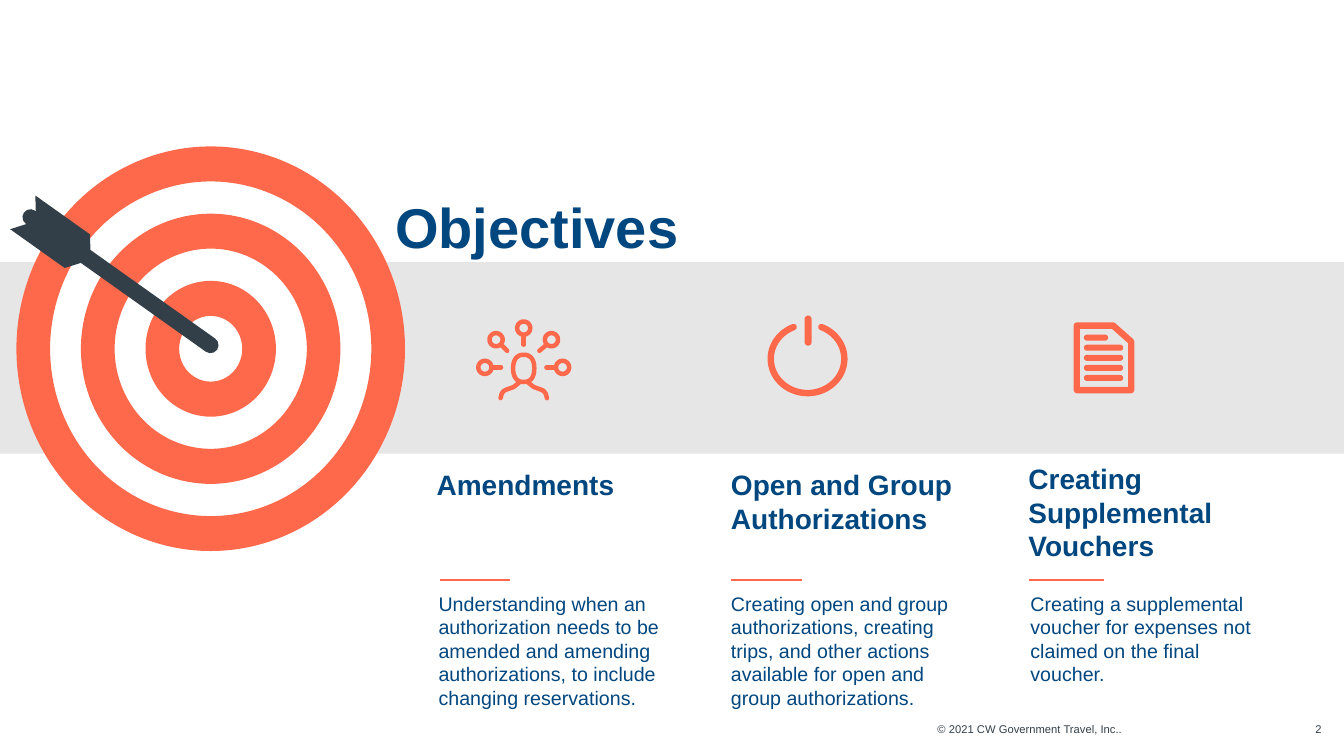
from dataclasses import dataclass
from math import copysign, cos, pi, radians, sin

from pptx import Presentation
from pptx.dml.color import RGBColor
from pptx.enum.shapes import MSO_CONNECTOR, MSO_SHAPE
from pptx.enum.text import MSO_ANCHOR, MSO_AUTO_SIZE, PP_ALIGN
from pptx.oxml.ns import qn
from pptx.oxml.xmlchemy import OxmlElement
from pptx.util import Inches, Pt


@dataclass(frozen=True)
class Theme:
    font: str = "Arial"
    navy: RGBColor = RGBColor(0x00, 0x46, 0x7F)
    coral: RGBColor = RGBColor(0xFF, 0x69, 0x4B)
    slate: RGBColor = RGBColor(0x33, 0x3F, 0x48)
    band: RGBColor = RGBColor(0xE7, 0xE6, 0xE6)
    white: RGBColor = RGBColor(0xFF, 0xFF, 0xFF)
    title_size: int = 40
    heading_size: int = 20
    body_size: int = 14
    footer_size: int = 8


THEME = Theme()

# Heading lines, heading (left, top), body text, body left, rule (left, width)
OBJECTIVES = [
    (["Amendments"], (4.33, 4.64),
     "Understanding when an authorization needs to be amended and amending "
     "authorizations, to include changing reservations.", 4.35, (4.36, 0.7)),
    (["Open and Group Authorizations"], (7.25, 4.64),
     "Creating open and group authorizations, creating trips, and other "
     "actions available for open and group authorizations.", 7.25, (7.25, 0.7)),
    (["Creating", "Supplemental Vouchers"], (10.2, 4.58),
     "Creating a supplemental voucher for expenses not claimed on the final "
     "voucher.", 10.22, (10.21, 0.74)),
]


def place(shape, left, top, width, height):
    shape.left, shape.top = Inches(left), Inches(top)
    shape.width, shape.height = Inches(width), Inches(height)


def write(box, lines, size, color, bold=False, align=PP_ALIGN.LEFT):
    frame = box.text_frame
    frame.word_wrap = True
    frame.auto_size = MSO_AUTO_SIZE.NONE
    frame.vertical_anchor = MSO_ANCHOR.TOP
    frame.margin_left = frame.margin_right = 0
    frame.margin_top = frame.margin_bottom = 0
    frame.text = "\n".join(lines)
    for para in frame.paragraphs:
        para.alignment = align
        para.line_spacing = 1.0
        para.font.name = THEME.font
        para.font.size = Pt(size)
        para.font.bold = bold
        para.font.color.rgb = color


def add_text(page, area, lines, size, color, **style):
    box = page.shapes.add_textbox(*map(Inches, area))
    write(box, lines, size, color, **style)


def add_solid(page, kind, area, color, outline=None):
    shape = page.shapes.add_shape(kind, *map(Inches, area))
    shape.shadow.inherit = False
    shape.fill.solid()
    shape.fill.fore_color.rgb = color
    if outline is None:
        shape.line.fill.background()
    else:
        shape.line.color.rgb = outline
        shape.line.width = Pt(1)
    return shape


def add_pill(page, area):
    pill = add_solid(page, MSO_SHAPE.ROUNDED_RECTANGLE, area, THEME.coral)
    pill.adjustments[0] = 0.5


def add_rule(page, left, top, width):
    rule = page.shapes.add_connector(
        MSO_CONNECTOR.STRAIGHT, *map(Inches, (left, top, left + width, top)))
    rule.line.color.rgb = THEME.coral
    rule.line.width = Pt(1.5)
    rule.element.spPr.append(OxmlElement("a:effectLst"))


def oval(x, y, x_radius, y_radius, power=1.0):
    """Points around an oval; a power below 1 makes it squarer."""
    def bend(value):
        return copysign(abs(value) ** power, value)

    angles = [2 * pi * step / 36 for step in range(37)]
    return [(x + x_radius * bend(cos(a)), y + y_radius * bend(sin(a)))
            for a in angles]


def add_strokes(page, strokes, points):
    """One unfilled coral outline with round ends and corners."""
    paths = [[(Inches(x), Inches(y)) for x, y in stroke] for stroke in strokes]
    builder = page.shapes.build_freeform(*paths[0][0])
    for index, path in enumerate(paths):
        if index:
            builder.move_to(*path[0])
        builder.add_line_segments(path[1:], close=path[0] == path[-1])
    shape = builder.convert_to_shape()
    shape.shadow.inherit = False
    shape.fill.background()
    shape.line.color.rgb = THEME.coral
    shape.line.width = Pt(points)
    line = shape.element.spPr.find(qn("a:ln"))
    line.set("cap", "rnd")
    line.append(OxmlElement("a:round"))


def add_target(page):
    for ring in range(6):
        width, height = 3.84 - 0.64 * ring, 4 - 2 * ring / 3
        area = (2.09 - width / 2, 3.46 - height / 2, width, height)
        color = THEME.white if ring % 2 else THEME.coral
        add_solid(page, MSO_SHAPE.OVAL, area, color, THEME.coral)


def add_arrow(page):
    parts = [
        (MSO_SHAPE.ROUNDED_RECTANGLE, (0.02, 2.71, 2.35, 0.16), 0.5, False),
        (MSO_SHAPE.PARALLELOGRAM, (0.24, 2.15, 0.77, 0.14), 0.753, True),
        (MSO_SHAPE.PARALLELOGRAM, (0.07, 2.37, 0.77, 0.14), 0.753, False),
    ]
    for kind, area, adjustment, flipped in parts:
        part = add_solid(page, kind, area, THEME.slate)
        part.adjustments[0] = adjustment
        part.rotation = 35.4
        if flipped:
            part.element.spPr.find(qn("a:xfrm")).set("flipH", "1")


def add_network_icon(page):
    axis, weight = 5.195, 3.2
    # Node center, then both ends of its stem
    nodes = [
        [(5.195, 3.255), (5.195, 3.34), (5.195, 3.42)],
        [(4.81, 3.645), (4.89, 3.645), (4.97, 3.645)],
        [(5.58, 3.645), (5.5, 3.645), (5.42, 3.645)],
        [(4.92, 3.37), (4.98, 3.43), (5.03, 3.48)],
        [(5.47, 3.37), (5.41, 3.43), (5.35, 3.48)],
    ]
    for center, *stem in nodes:
        add_strokes(page, [oval(*center, 0.065, 0.065), stem], weight)
    # Person: head and two mirrored shoulders
    shoulder = [(0.05, 3.8), (0.1, 3.84), (0.17, 3.865), (0.2, 3.88),
                (0.22, 3.91), (0.23, 3.95)]
    strokes = [oval(axis, 3.655, 0.105, 0.135, 0.85)]
    for side in (-1, 1):
        strokes.append([(axis + side * x, y) for x, y in shoulder])
    add_strokes(page, strokes, weight)


def add_power_icon(page):
    angles = [radians(angle) for angle in range(22, 339, 4)]
    arc = [(8.01 + 0.365 * sin(a), 3.56 - 0.34 * cos(a)) for a in angles]
    add_strokes(page, [arc], 4.6)
    add_pill(page, (7.98, 3.13, 0.07, 0.3))


def add_document_icon(page):
    sheet = [(10.68, 3.23), (11.04, 3.23), (11.22, 3.39),
             (11.22, 3.87), (10.68, 3.87), (10.68, 3.23)]
    add_strokes(page, [sheet], 4.6)
    for row in range(5):
        add_pill(page, (10.75, 3.32 + 0.1 * row, 0.39 if row else 0.24, 0.06))


def add_objective(page, heading, corner, body, body_left, rule):
    add_text(page, (*corner, 2.75, 0.47), heading, THEME.heading_size,
             THEME.navy, bold=True)
    add_text(page, (body_left, 5.87, 2.33, 1.24), [body], THEME.body_size,
             THEME.navy)
    left, width = rule
    add_rule(page, left, 5.75, width)


def main():
    deck = Presentation()
    deck.slide_width, deck.slide_height = Inches(13.33), Inches(7.5)
    page = deck.slides.add_slide(deck.slide_layouts[5])

    # Title
    title = page.shapes.title
    place(title, 3.92, 1.91, 3.92, 0.52)
    write(title, ["Objectives"], THEME.title_size, THEME.navy, bold=True)

    # Band, target and arrow
    add_solid(page, MSO_SHAPE.RECTANGLE, (0, 2.6, 13.33, 1.9), THEME.band)
    add_target(page)
    add_arrow(page)

    # Icons and the objectives under them
    add_network_icon(page)
    add_power_icon(page)
    add_document_icon(page)
    for objective in OBJECTIVES:
        add_objective(page, *objective)

    # Footer
    for area, text in [
        ((8.38, 7.17, 2.75, 0.14), "© 2021 CW Government Travel, Inc.."),
        ((12.88, 7.17, 0.23, 0.14), "2"),
    ]:
        add_text(page, area, [text], THEME.footer_size, THEME.slate,
                 align=PP_ALIGN.RIGHT)

    deck.save("out.pptx")


if __name__ == "__main__":
    main()
